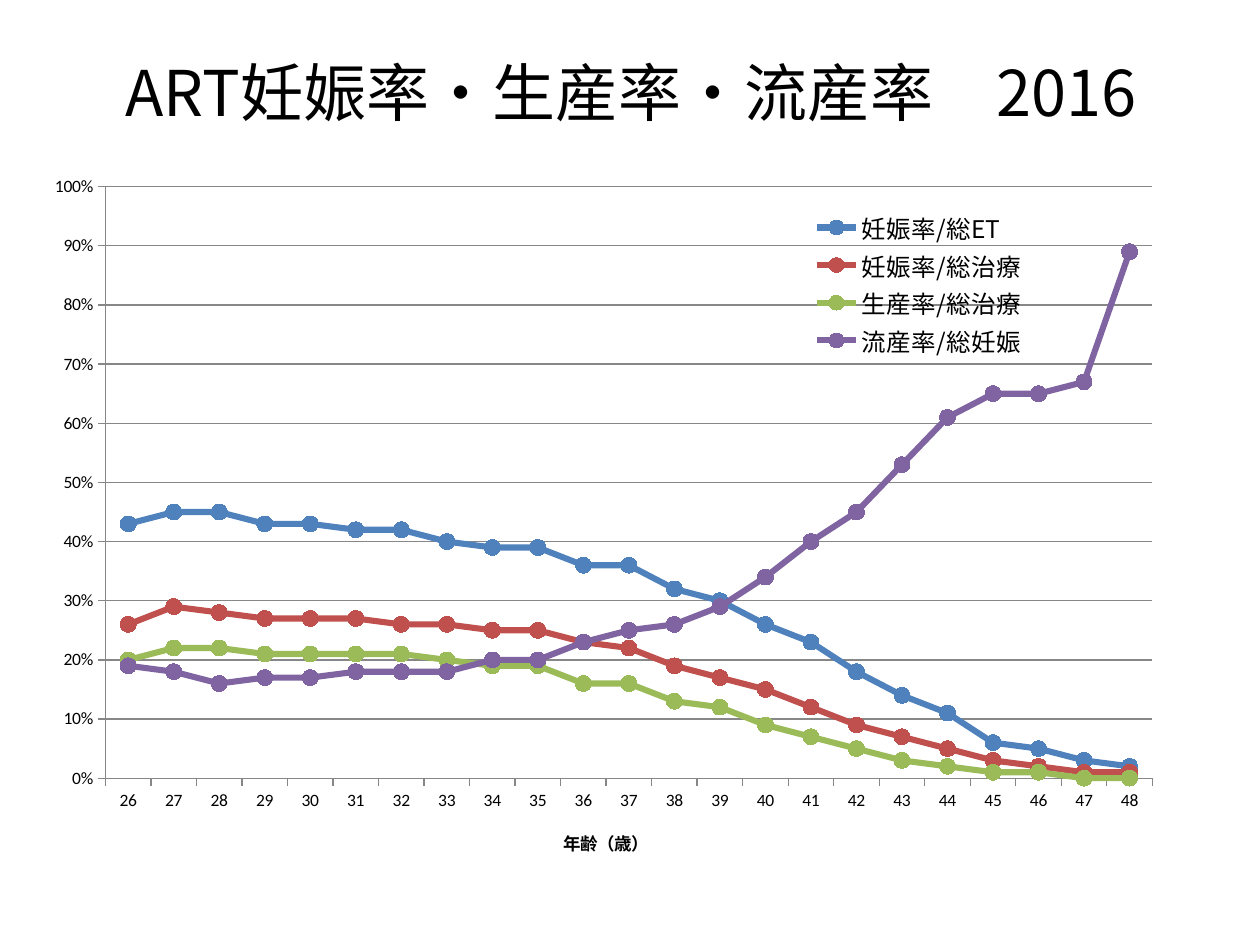
from dataclasses import dataclass

from lxml.etree import SubElement
from pptx import Presentation
from pptx.chart.data import CategoryChartData
from pptx.dml.color import RGBColor
from pptx.enum.chart import XL_CHART_TYPE, XL_LEGEND_POSITION, XL_MARKER_STYLE, XL_TICK_MARK
from pptx.enum.text import MSO_ANCHOR, MSO_AUTO_SIZE, PP_ALIGN
from pptx.oxml.ns import qn
from pptx.util import Emu, Pt

SCALE = 914400 / 126


@dataclass(frozen=True)
class Theme:
    ink: str = "000000"
    grid: str = "878787"
    blue: str = "4F81BD"
    red: str = "C0504D"
    green: str = "9BBB59"
    plum: str = "8064A2"
    latin: str = "Calibri"
    asian: str = "Noto Sans CJK JP"
    head: int = 36
    key: int = 14
    base: int = 10


@dataclass(frozen=True)
class Box:
    left: int
    top: int
    width: int
    height: int

    def emu(self) -> list[Emu]:
        return [px(n) for n in (self.left, self.top, self.width, self.height)]


@dataclass(frozen=True)
class Rate:
    name: str
    color: str
    percents: tuple[int, ...]


THEME = Theme()
PAGE = Box(0, 0, 1260, 945)
TITLE = Box(64, 34, 1134, 115)
CHART = Box(24, 164, 1216, 697)
PLOT = Box(105, 187, 1047, 598)
KEY = Box(805, 208, 228, 155)
LABEL = Box(560, 833, 78, 21)
AGES = range(26, 49)
RATES = (
    Rate("妊娠率/総ET", THEME.blue, (
        43, 45, 45, 43, 43, 42, 42, 40, 39, 39, 36, 36,
        32, 30, 26, 23, 18, 14, 11, 6, 5, 3, 2)),
    Rate("妊娠率/総治療", THEME.red, (
        26, 29, 28, 27, 27, 27, 26, 26, 25, 25, 23, 22,
        19, 17, 15, 12, 9, 7, 5, 3, 2, 1, 1)),
    Rate("生産率/総治療", THEME.green, (
        20, 22, 22, 21, 21, 21, 21, 20, 19, 19, 16, 16,
        13, 12, 9, 7, 5, 3, 2, 1, 1, 0, 0)),
    Rate("流産率/総妊娠", THEME.plum, (
        19, 18, 16, 17, 17, 18, 18, 18, 20, 20, 23, 25,
        26, 29, 34, 40, 45, 53, 61, 65, 65, 67, 89)),
)


def px(count: int) -> Emu:
    return Emu(round(count * SCALE))


def rgb(color: str) -> RGBColor:
    return RGBColor.from_string(color)


def set_font(font, size: int, name: str) -> None:
    font.size = Pt(size)
    font.name = name
    font.color.rgb = rgb(THEME.ink)


def set_line(line, color: str, width: float) -> None:
    line.color.rgb = rgb(color)
    line.width = Pt(width)


def add_asian(root) -> None:
    for latin in list(root.iter(qn("a:latin"))):
        if latin.get("typeface") == THEME.asian:
            node = latin.makeelement(qn("a:ea"), {"typeface": THEME.asian})
            latin.addnext(node)


def place(after, box: Box, inner: bool = False, sized: bool = True) -> None:
    parent = after.getparent()
    for old in parent.findall(qn("c:layout")):
        parent.remove(old)
    layout = parent.makeelement(qn("c:layout"), {})
    after.addprevious(layout)
    manual = SubElement(layout, qn("c:manualLayout"))
    parts = [("layoutTarget", "inner")] if inner else []
    parts += [("xMode", "edge"), ("yMode", "edge"),
              ("x", round((box.left - CHART.left) / CHART.width, 3)),
              ("y", round((box.top - CHART.top) / CHART.height, 3))]
    if sized:
        parts += [("w", round(box.width / CHART.width, 3)),
                  ("h", round(box.height / CHART.height, 3))]
    for tag, value in parts:
        SubElement(manual, qn(f"c:{tag}"), val=str(value))


def add_title(slide) -> None:
    title = slide.shapes.title
    title.left, title.top, title.width, title.height = TITLE.emu()
    frame = title.text_frame
    frame.word_wrap = True
    frame.auto_size = MSO_AUTO_SIZE.NONE
    frame.vertical_anchor = MSO_ANCHOR.MIDDLE
    para = frame.paragraphs[0]
    para.alignment = PP_ALIGN.CENTER
    run = para.add_run()
    run.text = "ART妊娠率・生産率・流産率\u30002016".replace("\u3000", "　")
    set_font(run.font, THEME.head, THEME.asian)
    add_asian(title.element)


def style_rate(series, rate: Rate) -> None:
    series.smooth = False
    set_line(series.format.line, rate.color, 3.5)
    mark = series.marker
    mark.style = XL_MARKER_STYLE.CIRCLE
    mark.size = 9
    mark.format.fill.solid()
    mark.format.fill.fore_color.rgb = rgb(rate.color)
    set_line(mark.format.line, rate.color, 0.75)


def style_axes(chart) -> None:
    ages, rates = chart.category_axis, chart.value_axis
    for axis in (ages, rates):
        axis.major_tick_mark = XL_TICK_MARK.OUTSIDE
        axis.minor_tick_mark = XL_TICK_MARK.NONE
        set_line(axis.format.line, THEME.grid, 0.75)
    rates.minimum_scale, rates.maximum_scale, rates.major_unit = 0, 1, 0.1
    rates.has_major_gridlines = True
    set_line(rates.major_gridlines.format.line, THEME.grid, 0.75)
    rates.tick_labels.number_format = "0%"
    rates.tick_labels.number_format_is_linked = False
    run = ages.axis_title.text_frame.paragraphs[0].add_run()
    run.text = "年齢（歳）"
    set_font(run.font, THEME.base, THEME.latin)
    run.font.bold = True


def add_rates(slide) -> None:
    data = CategoryChartData(number_format="0%")
    data.categories = [str(age) for age in AGES]
    for rate in RATES:
        data.add_series(rate.name, [n / 100 for n in rate.percents])
    chart = slide.shapes.add_chart(
        XL_CHART_TYPE.LINE_MARKERS, *CHART.emu(), data).chart
    chart.has_title = False
    set_font(chart.font, THEME.base, THEME.latin)
    chart.plots[0].vary_by_categories = False
    for series, rate in zip(chart.plots[0].series, RATES):
        style_rate(series, rate)
    style_axes(chart)
    chart.has_legend = True
    chart.legend.position = XL_LEGEND_POSITION.RIGHT
    chart.legend.include_in_layout = False
    set_font(chart.legend.font, THEME.key, THEME.asian)
    root = chart.element
    add_asian(root)
    place(root.find(f".//{qn('c:lineChart')}"), PLOT, inner=True)
    place(root.find(f".//{qn('c:legend')}/{qn('c:overlay')}"), KEY)
    place(root.find(f".//{qn('c:catAx')}/{qn('c:title')}/{qn('c:overlay')}"),
          LABEL, sized=False)


def main() -> None:
    deck = Presentation()
    deck.slide_width, deck.slide_height = px(PAGE.width), px(PAGE.height)
    slide = deck.slides.add_slide(deck.slide_layouts[5])
    add_title(slide)
    add_rates(slide)
    deck.save("out.pptx")


if __name__ == "__main__":
    main()
